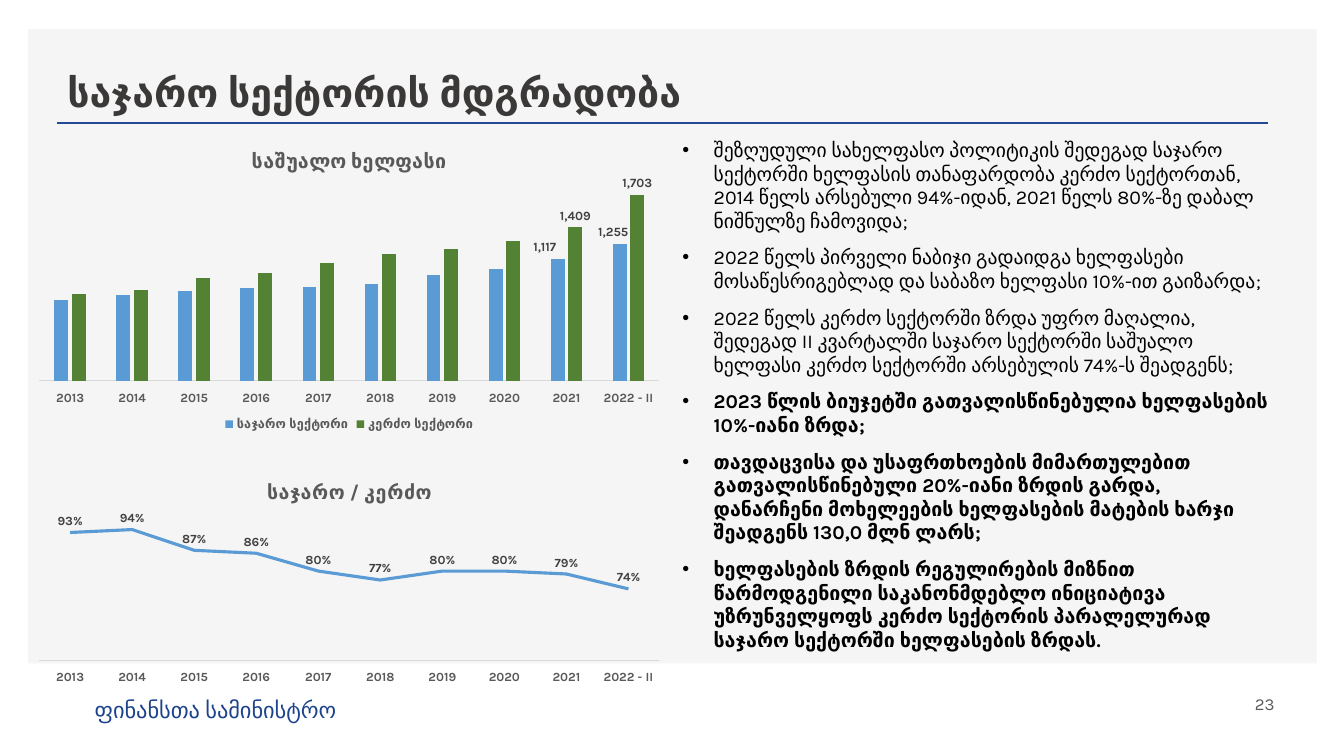
from lxml.etree import SubElement
from pptx import Presentation
from pptx.chart.data import CategoryChartData
from pptx.dml.color import RGBColor
from pptx.enum.chart import (XL_CHART_TYPE, XL_LABEL_POSITION, XL_LEGEND_POSITION,
                             XL_MARKER_STYLE, XL_TICK_LABEL_POSITION, XL_TICK_MARK)
from pptx.enum.shapes import MSO_CONNECTOR, MSO_SHAPE
from pptx.enum.text import MSO_ANCHOR, PP_ALIGN
from pptx.oxml import parse_xml
from pptx.oxml.ns import nsdecls, qn
from pptx.util import Inches, Pt

FONT = "Karla"
BLUE, GREEN, GREY = "5B9BD5", "548235", "595959"
PERIODS = [str(year) for year in range(2013, 2022)] + ["2022 - II"]
WAGES = [
    ("საჯარო სექტორი", BLUE, [739, 788, 826, 855, 861, 892, 974, 1024, 1117, 1255], {8: -0.02, 9: -0.01}),
    ("კერძო სექტორი", GREEN, [795, 836, 945, 991, 1077, 1164, 1211, 1285, 1409, 1703], {8: 0, 9: 0}),
]
RATIOS = [0.93, 0.94, 0.87, 0.86, 0.8, 0.77, 0.8, 0.8, 0.79, 0.74]
POINTS = [
    ("შეზღუდული სახელფასო პოლიტიკის შედეგად საჯარო სექტორში ხელფასის თანაფარდობა კერძო სექტორთან, "
     "2014 წელს არსებული 94%-იდან, 2021 წელს 80%-ზე დაბალ ნიშნულზე ჩამოვიდა;", False),
    ("2022 წელს პირველი ნაბიჯი გადაიდგა ხელფასები მოსაწესრიგებლად და საბაზო ხელფასი 10%-ით გაიზარდა;", False),
    ("2022 წელს კერძო სექტორში ზრდა უფრო მაღალია, შედეგად II კვარტალში საჯარო სექტორში საშუალო "
     "ხელფასი კერძო სექტორში არსებულის 74%-ს შეადგენს;", False),
    ("2023 წლის ბიუჯეტში გათვალისწინებულია ხელფასების 10%-იანი ზრდა;", True),
    ("თავდაცვისა და უსაფრთხოების მიმართულებით გათვალისწინებული 20%-იანი ზრდის გარდა, დანარჩენი "
     "მოხელეების ხელფასების მატების ხარჯი შეადგენს 130,0 მლნ ლარს;", True),
    ("ხელფასების ზრდის რეგულირების მიზნით წარმოდგენილი საკანონმდებლო ინიციატივა უზრუნველყოფს კერძო "
     "სექტორის პარალელურად საჯარო სექტორში ხელფასების ზრდას.", True),
]


def color(value):
    return RGBColor.from_string(value)


def style(font, size, shade, bold=False):
    font.name, font.size, font.bold = FONT, Pt(size), bold
    font.color.rgb = color(shade)


def add_text(page, place, text, size, shade, bold=False, anchor=MSO_ANCHOR.TOP,
             align=PP_ALIGN.LEFT, wrap=True):
    frame = page.shapes.add_textbox(*map(Inches, place)).text_frame
    frame.word_wrap, frame.vertical_anchor = wrap, anchor
    frame.text = text
    para = frame.paragraphs[0]
    para.alignment = align
    style(para.runs[0].font, size, shade, bold)


def add_backdrop(page, place):
    left, top, width, height = place
    panel = page.shapes.add_shape(MSO_SHAPE.RECTANGLE, *map(Inches, place))
    panel.shadow.inherit = False
    panel.fill.solid()
    panel.fill.fore_color.rgb = color("F5F5F5")
    panel.line.fill.background()
    rule_left, rule_top = left + 0.29, top + 0.93
    rule = page.shapes.add_connector(MSO_CONNECTOR.STRAIGHT, *map(
        Inches, (rule_left, rule_top, rule_left + 12.01, rule_top)))
    rule.line.color.rgb = color("224994")
    rule.line.width = Pt(2)
    SubElement(rule._element.spPr, qn("a:effectLst"))


def add_bullets(page, place):
    frame = page.shapes.add_textbox(*map(Inches, place)).text_frame
    frame.word_wrap = True
    frame.text = "\n".join(text for text, bold in POINTS)
    for index, (para, (text, bold)) in enumerate(zip(frame.paragraphs, POINTS)):
        if index:
            para.space_before = Pt(9.4)
        properties = para._p.get_or_add_pPr()
        properties.set("marL", str(Inches(0.31)))
        properties.set("indent", str(-Inches(0.31)))
        SubElement(properties, qn("a:buFont")).set("typeface", "Arial")
        SubElement(properties, qn("a:buChar")).set("char", "•")
        style(para.runs[0].font, 14, "000000", bold)


def manual_layout(**parts):
    order = ["layoutTarget", "xMode", "yMode", "x", "y", "w", "h"]
    body = "".join(f'<c:{name} val="{parts[name]}"/>' for name in order if name in parts)
    return parse_xml(f'<c:layout {nsdecls("c")}><c:manualLayout>{body}</c:manualLayout></c:layout>')


def add_chart(page, place, kind, series, number_format, title, title_spot, plot_area, limits):
    data = CategoryChartData(number_format=number_format)
    data.categories = PERIODS
    for name, values in series:
        data.add_series(name, values)
    chart = page.shapes.add_chart(kind, *map(Inches, place), data).chart
    style(chart.font, 10, "000000", True)
    chart.has_legend = False
    chart.has_title = True
    frame = chart.chart_title.text_frame
    frame.text = title
    style(frame.paragraphs[0].runs[0].font, 14, GREY, True)
    x, y = title_spot
    chart.chart_title._element.find(qn("c:tx")).addnext(
        manual_layout(xMode="edge", yMode="edge", x=x, y=y))
    plot = chart._chartSpace.find(".//" + qn("c:plotArea"))
    for old in plot.findall(qn("c:layout")):
        plot.remove(old)
    x, y, width, height = plot_area
    plot.insert(0, manual_layout(layoutTarget="inner", xMode="edge", yMode="edge",
                                 x=x, y=y, w=width, h=height))
    periods, scale = chart.category_axis, chart.value_axis
    periods.major_tick_mark = periods.minor_tick_mark = XL_TICK_MARK.NONE
    periods.tick_label_position = XL_TICK_LABEL_POSITION.LOW
    style(periods.tick_labels.font, 9, GREY, True)
    periods.format.line.color.rgb = color("D9D9D9")
    periods.format.line.width = Pt(0.75)
    scale.minimum_scale, scale.maximum_scale = limits
    scale.has_major_gridlines = False
    scale.visible = False
    chart.plots[0].vary_by_categories = False
    return chart


def add_wage_chart(page, place):
    chart = add_chart(page, place, XL_CHART_TYPE.COLUMN_CLUSTERED,
                      [(name, values) for name, shade, values, shifts in WAGES], "#,##0",
                      "საშუალო ხელფასი", (0.35, 0.05), (0.02, 0.17, 0.96, 0.65), (0, 1800))
    plot = chart.plots[0]
    plot.gap_width, plot.overlap = 219, -27
    for series, (name, shade, values, shifts) in zip(plot.series, WAGES):
        series.format.fill.solid()
        series.format.fill.fore_color.rgb = color(shade)
        series.data_labels.show_value = False
        for index, shift in shifts.items():
            label = series.points[index].data_label
            style(label.font, 9, "404040", True)
            label.position = XL_LABEL_POSITION.OUTSIDE_END
            if shift:
                spot = series._element.xpath(f"c:dLbls/c:dLbl/c:idx[@val='{index}']")[0]
                spot.addnext(manual_layout(x=shift, y=0))
    chart.has_legend = True
    chart.legend.position = XL_LEGEND_POSITION.BOTTOM
    chart.legend.include_in_layout = False
    style(chart.legend.font, 9, GREY, True)


def add_ratio_chart(page, place):
    chart = add_chart(page, place, XL_CHART_TYPE.LINE, [("Series 1", RATIOS)], "0%",
                      "საჯარო / კერძო", (0.37, 0.06), (0.02, 0.21, 0.96, 0.69), (0.5, 1))
    series = chart.plots[0].series[0]
    series.smooth = False
    series.marker.style = XL_MARKER_STYLE.NONE
    series.format.line.color.rgb = color(BLUE)
    series.format.line.width = Pt(2.25)
    labels = series.data_labels
    labels.show_value = True
    labels.number_format, labels.number_format_is_linked = "0%", False
    labels.position = XL_LABEL_POSITION.ABOVE
    style(labels.font, 9, "404040", True)


def build_sustainability_page(deck):
    page = deck.slides.add_slide(deck.slide_layouts[6])
    add_backdrop(page, (0.28, 0.29, 12.78, 6.29))
    add_text(page, (0.84, 6.86, 2.81, 0.37), "ფინანსთა სამინისტრო", 16, "1D438B", wrap=False)
    add_text(page, (0.57, 0.49, 12.17, 0.7), "საჯარო სექტორის მდგრადობა", 28, "3B3838", True,
             MSO_ANCHOR.BOTTOM)
    add_text(page, (9.16, 6.78, 3.58, 0.4), "23", 12, GREY, anchor=MSO_ANCHOR.MIDDLE,
             align=PP_ALIGN.RIGHT)
    add_bullets(page, (6.67, 1.32, 6.07, 5.72))
    add_wage_chart(page, (0.26, 1.32, 6.41, 3))
    add_ratio_chart(page, (0.26, 4.63, 6.41, 2.16))


def main():
    deck = Presentation()
    deck.slide_width, deck.slide_height = Inches(13.33), Inches(7.5)
    build_sustainability_page(deck)
    deck.save("out.pptx")


if __name__ == "__main__":
    main()
